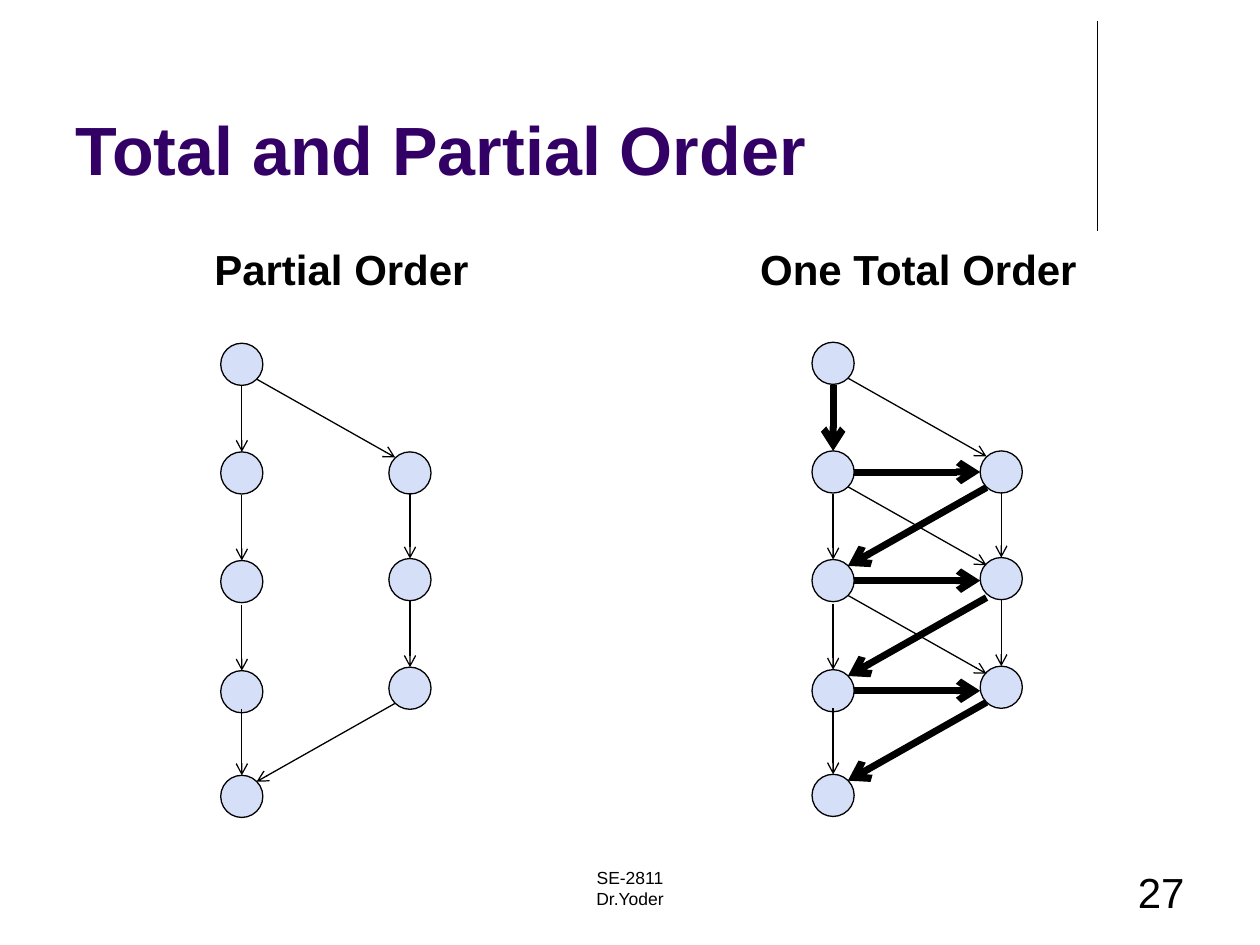
from dataclasses import dataclass

from lxml import etree
from pptx import Presentation
from pptx import util as u
from pptx.dml.color import RGBColor
from pptx.enum import shapes, text
from pptx.oxml.ns import qn


@dataclass(frozen=True)
class Theme:
    font: str = "Arial"
    title: RGBColor = RGBColor(0x33, 0x00, 0x66)
    ink: RGBColor = RGBColor(0, 0, 0)
    node: RGBColor = RGBColor(0xD5, 0xDF, 0xF7)
    title_size: float = 39
    heading_size: float = 24
    footer_size: float = 10
    thin: float = 0.75
    thick: float = 4


T = Theme()

# Graph geometry, in cm from the top left corner of a graph
NODE = 0.85
COLUMN_GAP = 3.39
DROP = 1.33          # height of a downward arrow
SLANT = 1.58         # height of a slanted arrow
NEAR, FAR = 0.15 * NODE, 0.85 * NODE   # where slanted arrows touch a circle
LEFT_TOPS = [0, 2.19, 4.38, 6.6, 8.71]
RIGHT_TOPS = [2.19, 4.34, 6.53]


def place(sp, left, top, width, height):
    sp.left, sp.top = u.Cm(left), u.Cm(top)
    sp.width, sp.height = u.Cm(width), u.Cm(height)


def write(sp, lines, size, color, align, anchor, bold=False):
    tf = sp.text_frame
    tf.word_wrap = True
    tf.auto_size = text.MSO_AUTO_SIZE.NONE
    tf.vertical_anchor = anchor
    for i, line in enumerate(lines):
        p = tf.add_paragraph() if i else tf.paragraphs[0]
        p.alignment = align
        p.space_before = u.Pt(0)
        r = p.add_run()
        r.text = line
        r.font.name, r.font.size, r.font.bold = T.font, u.Pt(size), bold
        r.font.color.rgb = color


def add_line(parts, x1, y1, x2, y2, width=T.thin, arrow=True):
    c = parts.add_connector(shapes.MSO_CONNECTOR.STRAIGHT,
                            u.Cm(x1), u.Cm(y1), u.Cm(x2), u.Cm(y2))
    c.line.color.rgb = T.ink
    c.line.width = u.Pt(width)
    if arrow:
        etree.SubElement(c.line._get_or_add_ln(), qn("a:tailEnd"), type="arrow")
    etree.SubElement(c._element.spPr, qn("a:effectLst"))


def add_node(parts, left, top):
    sp = parts.add_shape(shapes.MSO_SHAPE.OVAL, u.Cm(left), u.Cm(top),
                         u.Cm(NODE), u.Cm(NODE))
    sp.shadow.inherit = False
    sp.fill.solid()
    sp.fill.fore_color.rgb = T.node
    sp.line.color.rgb = T.ink
    sp.line.width = u.Pt(T.thin)


def add_graph(parts, left, top, total):
    """Two chains of nodes; a total order adds a heavy zigzag between them."""
    right = left + COLUMN_GAP
    for x, tops in ((left, LEFT_TOPS), (right, RIGHT_TOPS)):
        for y in tops:
            add_node(parts, x, top + y)

    # Arrows down each chain
    for x, tops in ((left, LEFT_TOPS), (right, RIGHT_TOPS)):
        mid = x + NODE / 2
        for i, y in enumerate(tops[1:]):
            heavy = total and x == left and i == 0
            add_line(parts, mid, top + y - DROP, mid, top + y,
                     T.thick if heavy else T.thin)

    # Arrows between the chains
    def slant_right(row):
        y = top + LEFT_TOPS[row] + FAR
        add_line(parts, left + FAR, y, right + NEAR, y + SLANT)

    def slant_left(row, width):
        y = top + LEFT_TOPS[row] + NEAR
        add_line(parts, right + NEAR, y - SLANT, left + FAR, y, width)

    slant_right(0)
    if not total:
        slant_left(4, T.thin)
        return
    for row in (1, 2):
        slant_right(row)
    for row in (1, 2, 3):
        y = top + LEFT_TOPS[row] + NODE / 2
        add_line(parts, left + NODE, y, right, y, T.thick)
        slant_left(row + 1, T.thick)


def add_headings(slide):
    holders = {sp.placeholder_format.idx: sp for sp in slide.placeholders}
    title = holders[0]
    place(title, 1.27, 0.76, 22.86, 3.18)
    write(title, ["Total and Partial Order"], T.title_size, T.title,
          text.PP_ALIGN.LEFT, text.MSO_ANCHOR.BOTTOM, bold=True)
    for idx, left, words in ((1, 1.27, "Partial Order"),
                             (3, 12.9, "One Total Order")):
        place(holders[idx], left, 4.27, 11.23, 1.78)
        write(holders[idx], [words], T.heading_size, T.ink,
              text.PP_ALIGN.CENTER, text.MSO_ANCHOR.BOTTOM, bold=True)
    for idx in (2, 4):
        sp = holders[idx]._element
        sp.getparent().remove(sp)


def add_footer(slide, top):
    for left, width, lines, size, align in (
            (8.68, 8.04, ["SE-2811", "Dr.Yoder"], T.footer_size, text.PP_ALIGN.CENTER),
            (18.2, 5.93, ["27"], T.heading_size, text.PP_ALIGN.RIGHT)):
        sp = slide.shapes.add_textbox(u.Cm(left), u.Cm(top), u.Cm(width), u.Cm(1.27))
        write(sp, lines, size, T.ink, align, text.MSO_ANCHOR.TOP)


def main():
    prs = Presentation()
    prs.slide_width, prs.slide_height = u.Cm(25.4), u.Cm(19.05)
    slide = prs.slides.add_slide(prs.slide_layouts[4])  # Comparison

    # Rule at the upper right, headings and footer
    add_line(slide.shapes, 22.12, 0.43, 22.12, 4.65, arrow=False)
    add_headings(slide)
    add_footer(slide, 17.35)

    # The two graphs
    add_graph(slide.shapes.add_group_shape().shapes, 4.45, 6.92, total=False)
    add_graph(slide.shapes, 16.37, 6.9, total=True)

    prs.save("out.pptx")


if __name__ == "__main__":
    main()
